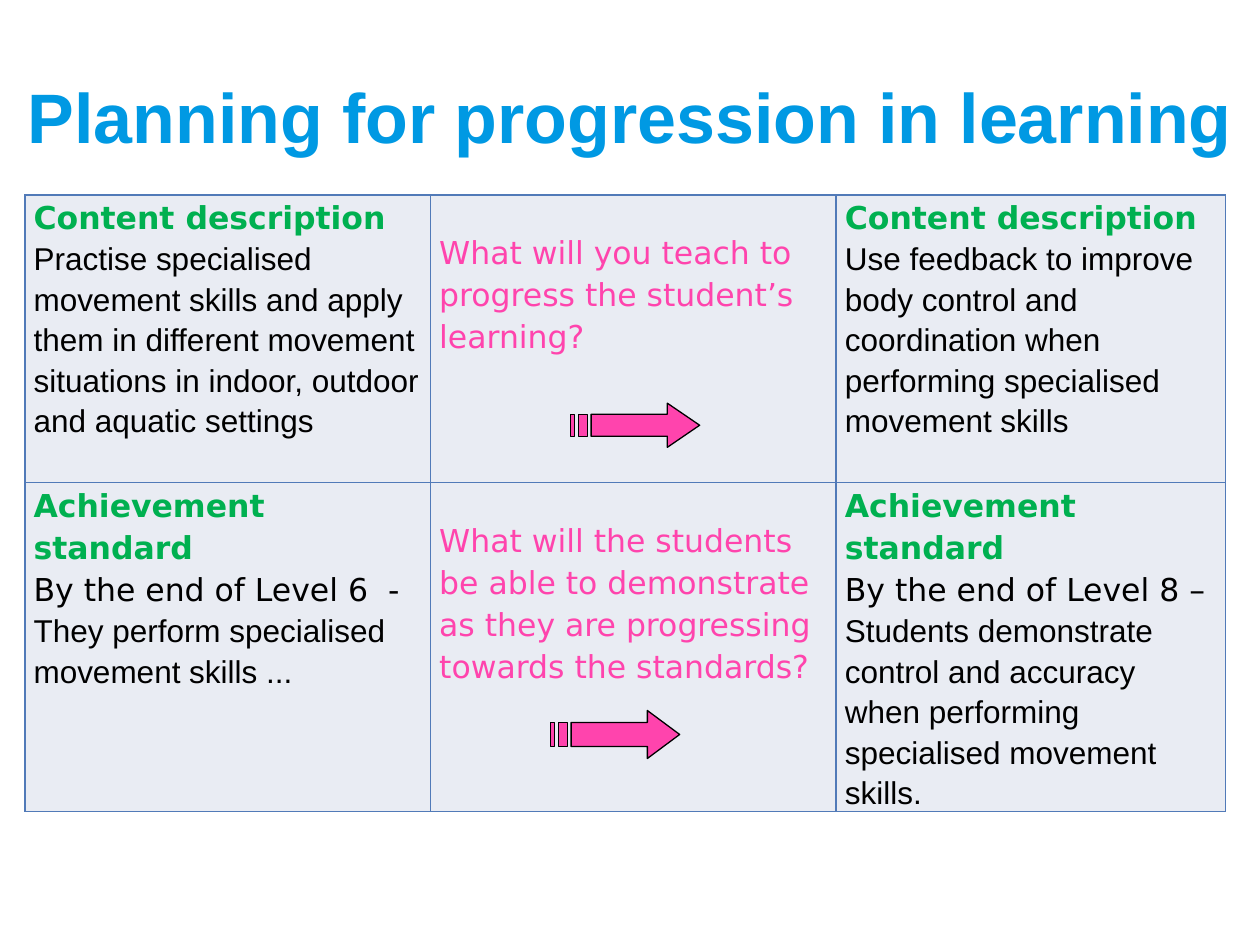
from lxml import etree
from pptx import Presentation
from pptx.dml.color import RGBColor
from pptx.enum.text import MSO_ANCHOR, MSO_AUTO_SIZE, PP_ALIGN
from pptx.oxml.ns import qn
from pptx.util import Pt

CENTER = PP_ALIGN.CENTER
MIDDLE = MSO_ANCHOR.MIDDLE
NO_AUTOFIT = MSO_AUTO_SIZE.NONE
TITLE_ONLY = 5

COLORS = {
    "title": "0099E3",
    "heading": "00B050",
    "body": "000000",
    "question": "FF44AD",
    "cell": "E9ECF3",
    "border": "517AB8",
}
SANS, WIDE = "Arial", "DejaVu Sans"

# Text roles: font, colour, bold
STYLES = {
    "heading": (WIDE, "heading", True),
    "level": (WIDE, "body", False),
    "body": (SANS, "body", False),
    "question": (WIDE, "question", False),
}

COLUMN_WIDTHS = (231.8, 231.8, 222.6)
ROW_HEIGHTS = (164.4, 170.6)
QUESTION_TOP = 20

PROGRESSION = [
    [
        [("heading", "Content description"),
         ("body", "Practise specialised movement skills and apply them in different "
                  "movement situations in indoor, outdoor and aquatic settings")],
        [("question", "What will you teach to progress the student’s learning?")],
        [("heading", "Content description"),
         ("body", "Use feedback to improve body control and coordination when "
                  "performing specialised movement skills")],
    ],
    [
        [("heading", "Achievement standard"),
         ("level", "By the end of Level 6  -"),
         ("body", "They perform specialised movement skills ...")],
        [("question", "What will the students be able to demonstrate as they are "
                      "progressing towards the standards?")],
        [("heading", "Achievement standard"),
         ("level", "By the end of Level 8 –"),
         ("body", "Students demonstrate control and accuracy when performing "
                  "specialised movement skills.")],
    ],
]

# Arrow outline as fractions of its width and height
ARROW_HEAD = [(0.75, 0), (0.75, 0.25), (0.16, 0.25), (0.16, 0.75),
              (0.75, 0.75), (0.75, 1), (1, 0.5)]
ARROW_STRIPES = [(0.06, 0.13), (0, 0.03)]


def rgb(name):
    return RGBColor.from_string(COLORS[name])


def format_font(font, size, face, color, bold):
    font.size = Pt(size)
    font.name = face
    font.bold = bold
    font.color.rgb = rgb(color)


def add_title(slide, text):
    title = slide.shapes.title
    title.left, title.top, title.width, title.height = Pt(0), Pt(21), Pt(720), Pt(90)
    frame = title.text_frame
    frame.text = text
    frame.auto_size = NO_AUTOFIT
    frame.vertical_anchor = MIDDLE
    heading = frame.paragraphs[0]
    heading.alignment = CENTER
    format_font(heading.runs[0].font, 40, SANS, "title", True)


def set_borders(cell):
    properties = cell._tc.get_or_add_tcPr()
    for position, side in enumerate(("a:lnL", "a:lnR", "a:lnT", "a:lnB")):
        line = etree.Element(qn(side), w=str(Pt(1)))
        fill = etree.SubElement(line, qn("a:solidFill"))
        etree.SubElement(fill, qn("a:srgbClr"), val=COLORS["border"])
        properties.insert(position, line)


def fill_cell(cell, entries):
    cell.fill.solid()
    cell.fill.fore_color.rgb = rgb("cell")
    set_borders(cell)
    cell.margin_left = cell.margin_right = Pt(5)
    cell.margin_top = Pt(QUESTION_TOP if entries[0][0] == "question" else 0)
    cell.margin_bottom = Pt(0)
    frame = cell.text_frame
    for index, (role, text) in enumerate(entries):
        paragraph = frame.add_paragraph() if index else frame.paragraphs[0]
        paragraph.text = text
        paragraph.line_spacing = 1.15
        format_font(paragraph.runs[0].font, 18, *STYLES[role])


def add_progression_table(slide):
    table = slide.shapes.add_table(
        len(ROW_HEIGHTS), len(COLUMN_WIDTHS), Pt(14.2), Pt(111.4),
        Pt(sum(COLUMN_WIDTHS)), Pt(sum(ROW_HEIGHTS))).table
    table.first_row = table.horz_banding = False
    for column, width in zip(table.columns, COLUMN_WIDTHS):
        column.width = Pt(width)
    for row, height, contents in zip(table.rows, ROW_HEIGHTS, PROGRESSION):
        row.height = Pt(height)
        for cell, entries in zip(row.cells, contents):
            fill_cell(cell, entries)


def add_striped_arrow(slide, left, top, width, height):
    stripes = [[(start, 0.25), (start, 0.75), (end, 0.75), (end, 0.25)]
               for start, end in ARROW_STRIPES]
    contours = [[(Pt(left + x * width), Pt(top + y * height)) for x, y in outline]
                for outline in [ARROW_HEAD] + stripes]
    builder = slide.shapes.build_freeform(*contours[0][0])
    for index, points in enumerate(contours):
        if index:
            builder.move_to(*points[0])
        builder.add_line_segments(points[1:], close=True)
    arrow = builder.convert_to_shape()
    arrow.shadow.inherit = False
    arrow.fill.solid()
    arrow.fill.fore_color.rgb = rgb("question")
    arrow.line.color.rgb = rgb("body")
    arrow.line.width = Pt(0.75)


def main():
    prs = Presentation()
    prs.slide_width, prs.slide_height = Pt(720), Pt(540)
    slide = prs.slides.add_slide(prs.slide_layouts[TITLE_ONLY])

    add_title(slide, "Planning for progression in learning")
    add_progression_table(slide)

    # One arrow under each question
    add_striped_arrow(slide, 314.6, 406, 73.8, 27.4)
    add_striped_arrow(slide, 326, 230.4, 73.8, 25.2)

    prs.save("out.pptx")


if __name__ == "__main__":
    main()
